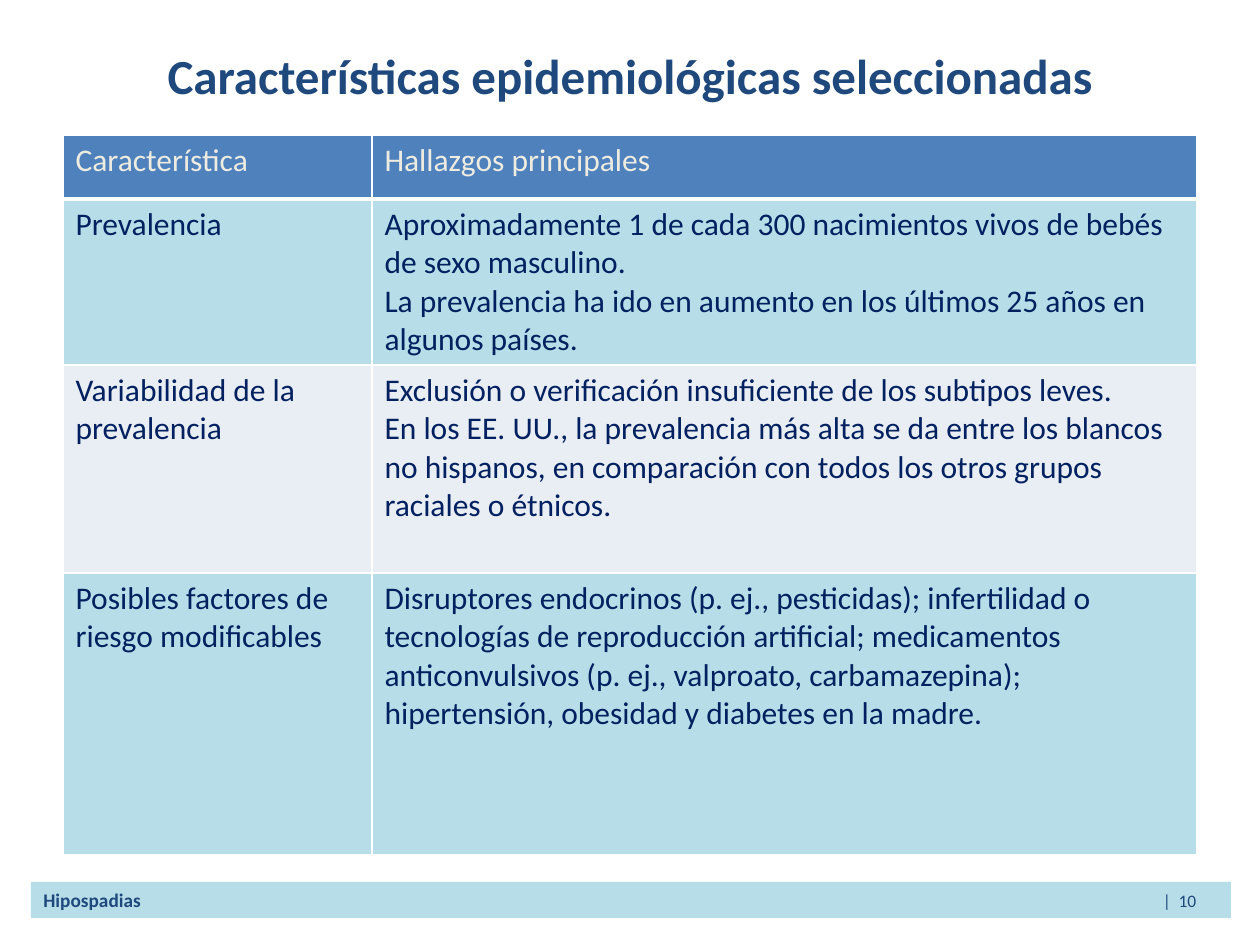
import dataclasses

import lxml.etree
import pptx
import pptx.dml.color
import pptx.enum.shapes
import pptx.enum.text
import pptx.oxml
import pptx.oxml.ns
import pptx.util

PX = 914400 // 126


@dataclasses.dataclass(frozen=True)
class Theme:
    """Colours, font and type sizes of the slide."""
    font: str = "Calibri"
    title: str = "1F497D"
    header: str = "4F81BD"
    header_text: str = "EEECE1"
    body_text: str = "002060"
    aqua: str = "B7DEE8"
    pale: str = "E9EDF4"
    border: str = "FFFFFF"
    title_pt: int = 28
    table_pt: int = 18
    footer_pt: int = 11
    page_pt: int = 10


THEME = Theme()
COLUMNS = [309, 825]
ROWS = [
    (64, "Característica", "Hallazgos principales"),
    (166, "Prevalencia",
     "Aproximadamente 1 de cada 300 nacimientos vivos de bebés de sexo masculino.\n"
     "La prevalencia ha ido en aumento en los últimos 25 años en algunos países."),
    (208, "Variabilidad de la prevalencia",
     "Exclusión o verificación insuficiente de los subtipos leves.\n"
     "En los EE. UU., la prevalencia más alta se da entre los blancos no hispanos, "
     "en comparación con todos los otros grupos raciales o étnicos."),
    (282, "Posibles factores de riesgo modificables",
     "Disruptores endocrinos (p. ej., pesticidas); infertilidad o tecnologías de "
     "reproducción artificial; medicamentos anticonvulsivos (p. ej., valproato, "
     "carbamazepina); hipertensión, obesidad y diabetes en la madre."),
]


def px(*values):
    """Turn pixel lengths into EMU."""
    return [pptx.util.Emu(v * PX) for v in values]


def rgb(colour):
    """Return a colour object for a hex string."""
    return pptx.dml.color.RGBColor.from_string(colour)


def set_font(font, size, colour, bold=False):
    """Apply the theme font with a size, colour and weight."""
    font.name = THEME.font
    font.size = pptx.util.Pt(size)
    font.bold = bold
    font.color.rgb = rgb(colour)


def add_title(s, text, box):
    """Add the centred slide title."""
    tf = s.shapes.add_textbox(*px(*box)).text_frame
    tf.word_wrap = True
    tf.vertical_anchor = pptx.enum.text.MSO_ANCHOR.MIDDLE
    p = tf.paragraphs[0]
    p.text = text
    p.alignment = pptx.enum.text.PP_ALIGN.CENTER
    set_font(p.font, THEME.title_pt, THEME.title, True)


def add_footer(s, topic, page, box, tab):
    """Add the footer band with the page number at a right tab."""
    sp = s.shapes.add_shape(pptx.enum.shapes.MSO_SHAPE.RECTANGLE, *px(*box))
    sp.shadow.inherit = False
    sp.fill.solid()
    sp.fill.fore_color.rgb = rgb(THEME.aqua)
    sp.line.fill.background()
    tf = sp.text_frame
    tf.word_wrap = True
    tf.vertical_anchor = pptx.enum.text.MSO_ANCHOR.MIDDLE
    p = tf.paragraphs[0]
    p.alignment = pptx.enum.text.PP_ALIGN.LEFT
    qn = pptx.oxml.ns.qn
    tabs = lxml.etree.SubElement(p._p.get_or_add_pPr(), qn("a:tabLst"))
    lxml.etree.SubElement(tabs, qn("a:tab"), pos=str(tab * PX), algn="r")
    for text, size, bold in ((topic + "\t", THEME.footer_pt, True),
                             (page, THEME.page_pt, False)):
        r = p.add_run()
        r.text = text
        set_font(r.font, size, THEME.title, bold)


def set_borders(cell, bottom):
    """Draw white borders around a cell."""
    tc_pr = cell._tc.get_or_add_tcPr()
    ns = pptx.oxml.ns.nsdecls("a")
    for i, (side, width) in enumerate(zip("LRTB", (1, 1, 1, bottom))):
        tc_pr.insert(i, pptx.oxml.parse_xml(
            f'<a:ln{side} {ns} w="{pptx.util.Pt(width)}"><a:solidFill>'
            f'<a:srgbClr val="{THEME.border}"/></a:solidFill></a:ln{side}>'))


def fill_cell(cell, text, fill, colour, bottom):
    """Write and style one table cell."""
    cell.text = text
    cell.fill.solid()
    cell.fill.fore_color.rgb = rgb(fill)
    set_borders(cell, bottom)
    for p in cell.text_frame.paragraphs:
        set_font(p.font, THEME.table_pt, colour)


def add_findings(s, left, top):
    """Add the table of findings."""
    size = sum(COLUMNS), sum(row[0] for row in ROWS)
    table = s.shapes.add_table(len(ROWS), len(COLUMNS), *px(left, top, *size)).table
    for column, width in zip(table.columns, px(*COLUMNS)):
        column.width = width
    for i, (height, *texts) in enumerate(ROWS):
        table.rows[i].height = px(height)[0]
        if i == 0:
            style = THEME.header, THEME.header_text, 3
        else:
            style = (THEME.aqua if i % 2 else THEME.pale), THEME.body_text, 1
        for j, text in enumerate(texts):
            fill_cell(table.cell(i, j), text, *style)


def main():
    """Build and save the slide."""
    prs = pptx.Presentation()
    prs.slide_width, prs.slide_height = px(1260, 945)
    s = prs.slides.add_slide(prs.slide_layouts[6])
    add_footer(s, "Hipospadias", "|  10", (31, 882, 1200, 36), 1153)
    add_title(s, "Características epidemiológicas seleccionadas", (63, -4, 1134, 158))
    add_findings(s, 63, 135)
    prs.save("out.pptx")


if __name__ == "__main__":
    main()
